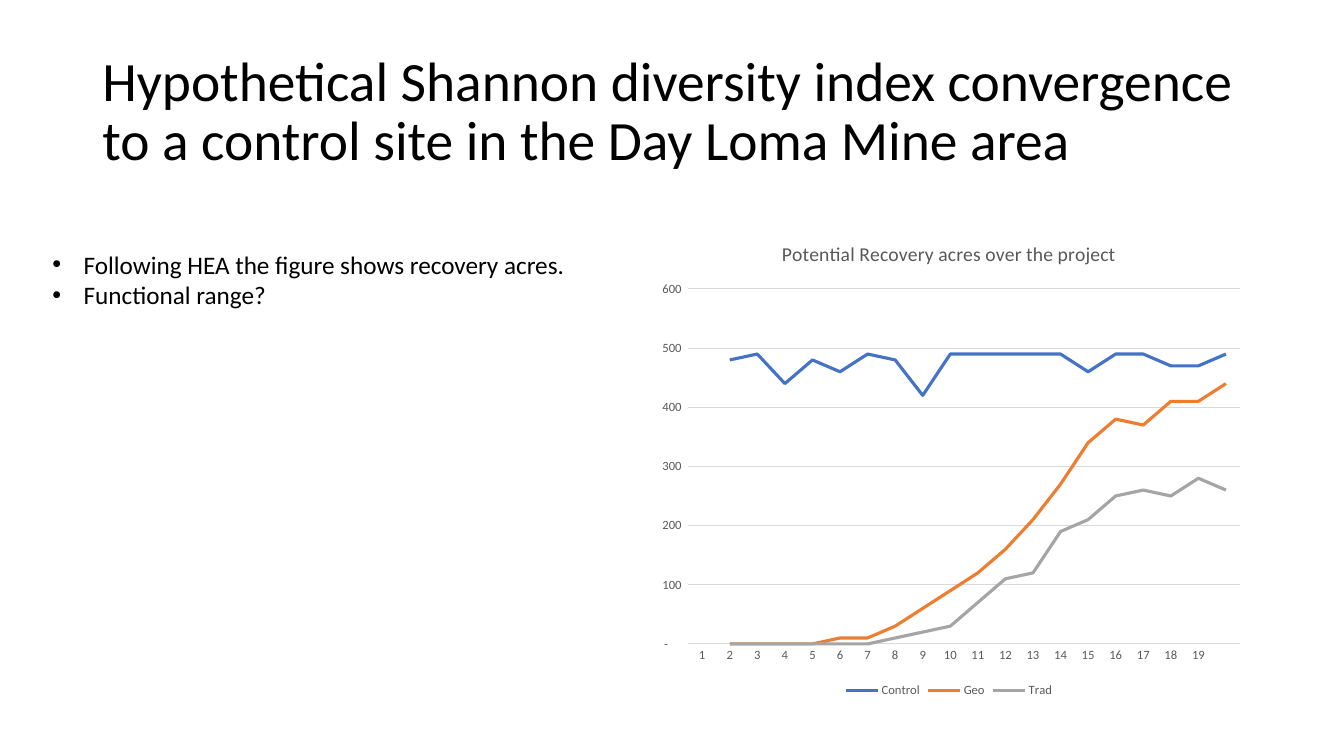
from dataclasses import dataclass

from lxml.etree import SubElement
from pptx import Presentation
from pptx.chart.data import CategoryChartData
from pptx.dml.color import RGBColor
from pptx.enum.chart import XL_CHART_TYPE, XL_LEGEND_POSITION, XL_TICK_MARK
from pptx.enum.text import MSO_ANCHOR
from pptx.oxml.ns import qn
from pptx.util import Cm, Pt


@dataclass(frozen=True)
class Theme:
    font: str = "Calibri"
    text: str = "000000"
    muted: str = "595959"
    grid: str = "D9D9D9"
    control: str = "4472C4"
    geo: str = "ED7D31"
    trad: str = "A5A5A5"
    title: float = 39.6
    body: float = 18
    chart_title: float = 14
    label: float = 9


theme = Theme()


def style_font(font, size, color):
    for name, value in {"name": theme.font, "size": Pt(size), "bold": False}.items():
        setattr(font, name, value)
    font.color.rgb = RGBColor.from_string(color)


def style_line(line, color, width):
    line.color.rgb = RGBColor.from_string(color)
    line.width = Pt(width)


prs = Presentation()
prs.slide_width, prs.slide_height = Cm(33.87), Cm(19.05)
s = prs.slides.add_slide(prs.slide_layouts[6])

# Title
tf = s.shapes.add_textbox(Cm(2.33), Cm(1.01), Cm(29.21), Cm(3.68)).text_frame
tf.word_wrap = True
tf.vertical_anchor = MSO_ANCHOR.MIDDLE
p = tf.paragraphs[0]
p.line_spacing = 0.9
r = p.add_run()
r.text = "Hypothetical Shannon diversity index convergence to a control site in the Day Loma Mine area"
style_font(r.font, theme.title, theme.text)

# Bullets
tf = s.shapes.add_textbox(Cm(1.07), Cm(6.15), Cm(14.71), Cm(1.8)).text_frame
tf.word_wrap = True
bullets = ["Following HEA the figure shows recovery acres.", "Functional range?"]
for i, bullet in enumerate(bullets):
    p = tf.add_paragraph() if i else tf.paragraphs[0]
    r = p.add_run()
    r.text = bullet
    style_font(r.font, theme.body, theme.text)
    pPr = p._p.get_or_add_pPr()
    pPr.set("marL", str(Cm(0.79)))
    pPr.set("indent", str(-Cm(0.79)))
    SubElement(pPr, qn("a:buFont"), typeface="Arial")
    SubElement(pPr, qn("a:buChar"), char="•")

# Recovery chart: the last point has no year label
recovery = {
    "Control": (theme.control, [None, 480, 490, 440, 480, 460, 490, 480, 420, 490,
                                490, 490, 490, 490, 460, 490, 490, 470, 470, 490]),
    "Geo": (theme.geo, [None, 0, 0, 0, 0, 10, 10, 30, 60, 90,
                        120, 160, 210, 270, 340, 380, 370, 410, 410, 440]),
    "Trad": (theme.trad, [None, 0, 0, 0, 0, 0, 0, 10, 20, 30,
                          70, 110, 120, 190, 210, 250, 260, 250, 280, 260]),
}
data = CategoryChartData()
data.categories = [str(year) for year in range(1, 20)] + [""]
for name, (color, values) in recovery.items():
    data.add_series(name, values)
chart = s.shapes.add_chart(XL_CHART_TYPE.LINE, Cm(16.28), Cm(5.59), Cm(15.27), Cm(12.09), data).chart
style_font(chart.font, 10, theme.text)

chart.has_title = True
chart.chart_title.include_in_layout = False
r = chart.chart_title.text_frame.paragraphs[0].add_run()
r.text = "Potential Recovery acres over the project"
style_font(r.font, theme.chart_title, theme.muted)

chart.has_legend = True
chart.legend.position = XL_LEGEND_POSITION.BOTTOM
chart.legend.include_in_layout = False
style_font(chart.legend.font, theme.label, theme.muted)

plot = chart.plots[0]
plot.vary_by_categories = False
for series in plot.series:
    series.smooth = False
    style_line(series.format.line, recovery[series.name][0], 2.25)

for axis in (chart.category_axis, chart.value_axis):
    axis.major_tick_mark = axis.minor_tick_mark = XL_TICK_MARK.NONE
    style_font(axis.tick_labels.font, theme.label, theme.muted)
style_line(chart.category_axis.format.line, theme.grid, 0.75)

acres = chart.value_axis
acres.minimum_scale, acres.maximum_scale, acres.major_unit = 0, 600, 100
acres.format.line.fill.background()
acres.has_major_gridlines = True
style_line(acres.major_gridlines.format.line, theme.grid, 0.75)
acres.tick_labels.number_format = r'_(* #,##0_);_(* \(#,##0\);_(* "-"??_);_(@_)'
acres.tick_labels.number_format_is_linked = False

# Fixed inner plot area, as fractions of the chart
plot_area = chart._chartSpace.chart.plotArea
for old in plot_area.findall(qn("c:layout")):
    plot_area.remove(old)
layout = SubElement(plot_area, qn("c:layout"))
plot_area.insert(0, layout)
manual = SubElement(layout, qn("c:manualLayout"))
for tag, val in {"layoutTarget": "inner", "xMode": "edge", "yMode": "edge",
                 "x": "0.07", "y": "0.14", "w": "0.91", "h": "0.74"}.items():
    SubElement(manual, qn(f"c:{tag}"), val=val)

prs.save("out.pptx")
